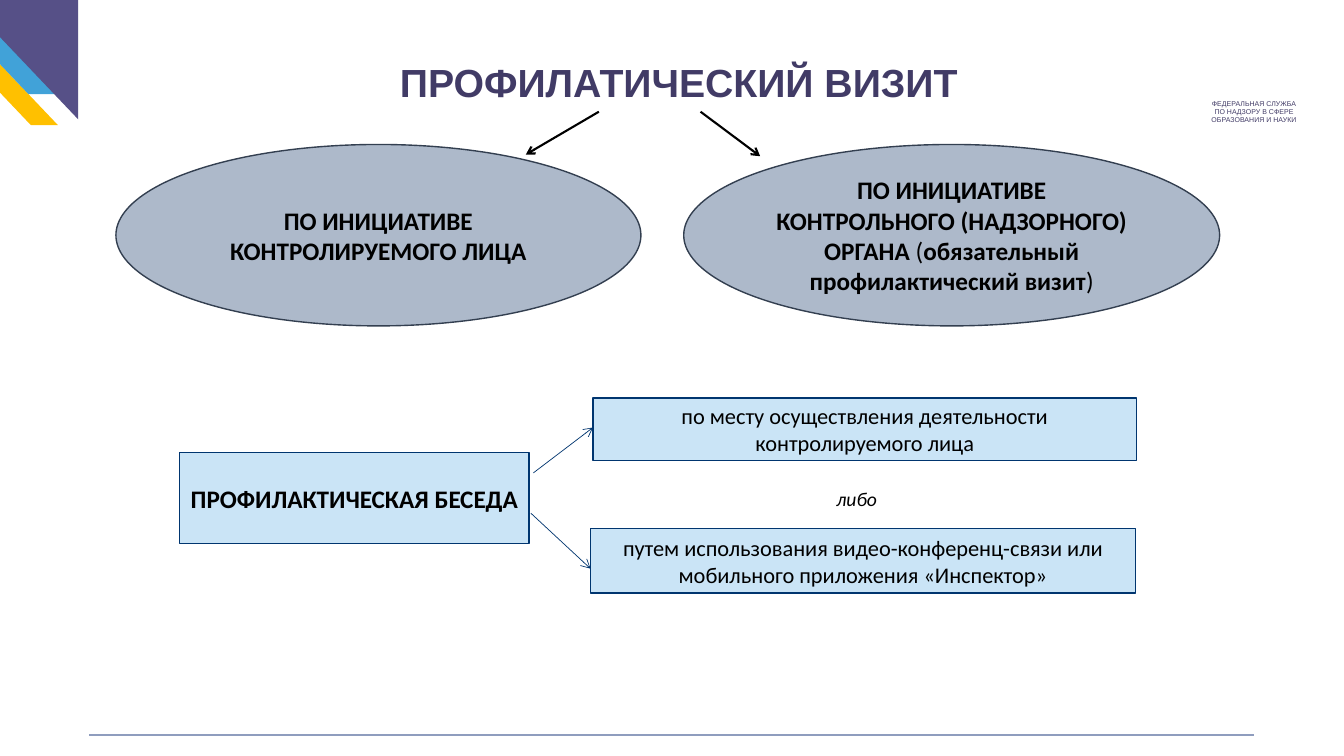
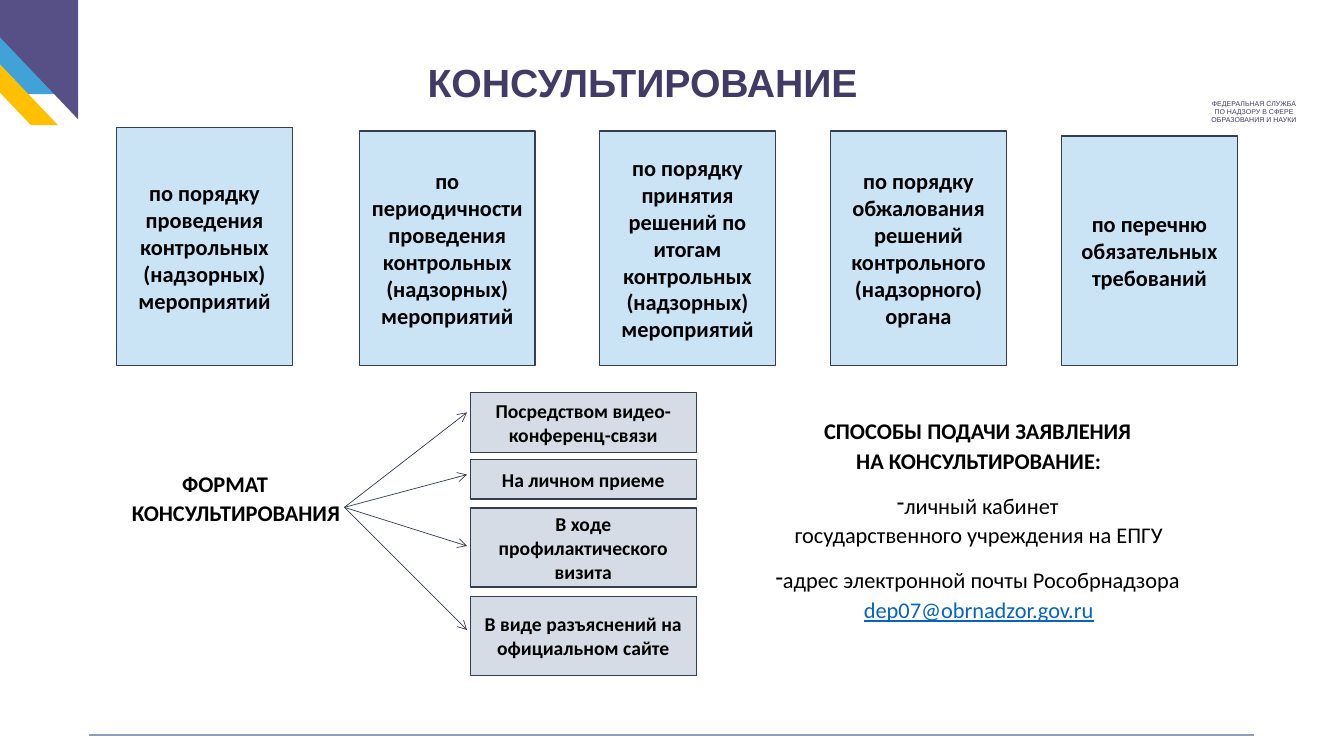
import lxml.etree
import pptx
import pptx.dml.color
import pptx.enum.shapes
import pptx.enum.text
import pptx.oxml.ns
import pptx.util

RGBColor = pptx.dml.color.RGBColor
SHAPE = pptx.enum.shapes.MSO_SHAPE
ALIGN = pptx.enum.text.PP_ALIGN
ANCHOR = pptx.enum.text.MSO_ANCHOR
qn = pptx.oxml.ns.qn

PURPLE = RGBColor(0x56, 0x50, 0x87)
BLUE = RGBColor(0x41, 0xA2, 0xD8)
YELLOW = RGBColor(0xFF, 0xC0, 0x00)
TITLE_COLOR = RGBColor(0x41, 0x3B, 0x66)
RULE_COLOR = RGBColor(0x8F, 0x9D, 0xBE)
PALE_BLUE = RGBColor(0xCA, 0xE4, 0xF6)
NAVY = RGBColor(0x00, 0x35, 0x6F)
GREY_BLUE = RGBColor(0xAD, 0xB9, 0xCA)
PALE_GREY = RGBColor(0xD6, 0xDC, 0xE5)
SLATE = RGBColor(0x33, 0x3F, 0x50)
LINK_COLOR = RGBColor(0x05, 0x63, 0xC1)
BLACK = RGBColor(0, 0, 0)
WHITE = RGBColor(0xFF, 0xFF, 0xFF)

# The slide is a grid of 160 columns by 90 rows with square cells
COLUMNS, ROWS = 160, 90
CELL = pptx.util.Inches(7.5) / ROWS


def add_block(slide, box, fill, outline=None, parts=(), size=16, bold=False,
              preset=SHAPE.RECTANGLE):
    """Filled shape with centred text; every second part switches the weight."""
    block = slide.shapes.add_shape(preset, *[round(n * CELL) for n in box])
    block.shadow.inherit = False
    block.fill.solid()
    block.fill.fore_color.rgb = fill
    if outline is None:
        block.line.fill.background()
    else:
        block.line.color.rgb = outline
        block.line.width = pptx.util.Pt(1)
    block.text_frame.vertical_anchor = ANCHOR.MIDDLE
    paragraph = block.text_frame.paragraphs[0]
    paragraph.alignment = ALIGN.CENTER
    for number, part in enumerate(parts):
        run = paragraph.add_run()
        run.text = part
        run.font.name = "Calibri"
        run.font.size = pptx.util.Pt(size)
        run.font.bold = bold != (number % 2 == 1)
        run.font.color.rgb = BLACK
    return block


def add_line(slide, ends, color, width, arrow=True):
    """Straight line between two grid points, with an arrowhead at the end."""
    line = slide.shapes.add_connector(pptx.enum.shapes.MSO_CONNECTOR.STRAIGHT,
                                      *[round(n * CELL) for n in ends])
    line.line.color.rgb = color
    line.line.width = pptx.util.Pt(width)
    properties = line.element.spPr
    if arrow:
        lxml.etree.SubElement(properties.find(qn("a:ln")), qn("a:tailEnd"), type="arrow")
    lxml.etree.SubElement(properties, qn("a:effectLst"))
    return line


deck = pptx.Presentation()
deck.slide_width = round(COLUMNS * CELL)
deck.slide_height = round(ROWS * CELL)
layout = deck.slide_layouts[5]
for placeholder in list(layout.placeholders):
    if placeholder.placeholder_format.idx >= 10:
        layout.shapes.element.remove(placeholder.element)

# Titles
slides = []
for heading, left in [("ПРОФИЛАТИЧЕСКИЙ ВИЗИТ", 15.3), ("КОНСУЛЬТИРОВАНИЕ", 11)]:
    slide = deck.slides.add_slide(layout)
    title = slide.shapes.title
    title.left, title.top, title.width, title.height = [
        round(n * CELL) for n in (left, 6.4, 131, 6.8)]
    title.text_frame.text = heading
    title.text_frame.vertical_anchor = ANCHOR.MIDDLE
    title.text_frame.paragraphs[0].alignment = ALIGN.CENTER
    font = title.text_frame.paragraphs[0].runs[0].font
    font.name, font.size, font.bold = "Arial", pptx.util.Pt(28), True
    font.color.rgb = TITLE_COLOR
    slides.append(slide)
visit, consulting = slides

# Shared decoration: corner, agency name and bottom rule, moved to the layout
decoration = []
for color, left, top in [(YELLOW, -10, 0.5), (BLUE, -10.3, -3.2)]:
    stripe = add_block(visit, (left, top, 16.9, 14.4), color, preset=SHAPE.PARALLELOGRAM)
    stripe.adjustments[0] = 0.95
    stripe.element.spPr.find(qn("a:xfrm")).set("flipH", "1")
    decoration.append(stripe)
corner = add_block(visit, (-4.3, -0.1, 13.6, 14.3), PURPLE, preset=SHAPE.RIGHT_TRIANGLE)
corner.rotation = 180
agency = visit.shapes.add_textbox(*[round(n * CELL) for n in (141.2, 11.2, 16.2, 4.2)])
agency.text_frame.word_wrap = True
agency.text_frame.text = "ФЕДЕРАЛЬНАЯ СЛУЖБА\nПО НАДЗОРУ В СФЕРЕ ОБРАЗОВАНИЯ И НАУКИ"
for paragraph in agency.text_frame.paragraphs:
    paragraph.alignment = ALIGN.CENTER
    font = paragraph.runs[0].font
    font.name, font.size = "Arial", pptx.util.Pt(5)
    font.color.rgb = TITLE_COLOR
rule = add_line(visit, (10.6, 87.5, 149.3, 87.5), RULE_COLOR, 1.5, arrow=False)
for part in decoration + [corner, agency, rule]:
    layout.shapes.element.append(part.element)

# Visit: who initiates it
initiators = [
    (13.8, 62.5, ["ПО ИНИЦИАТИВЕ КОНТРОЛИРУЕМОГО ЛИЦА"]),
    (81.4, 63.8, ["ПО ИНИЦИАТИВЕ КОНТРОЛЬНОГО (НАДЗОРНОГО) ОРГАНА ", "(",
                  "обязательный профилактический визит", ")"]),
]
for left, width, parts in initiators:
    add_block(visit, (left, 17.2, width, 21.6), GREY_BLUE, SLATE, parts, 18, True, SHAPE.OVAL)
for ends in [(71.3, 13.3, 62.6, 18.4), (83.4, 13.3, 90.5, 18.6)]:
    add_line(visit, ends, BLACK, 1.5)

# Visit: how the talk is held
add_block(visit, (21.4, 53.9, 41.6, 10.8), PALE_BLUE, NAVY,
          ["ПРОФИЛАКТИЧЕСКАЯ БЕСЕДА"], 18, True)
talk_options = [
    ((70.6, 47.4, 64.7, 7.4), "по месту осуществления деятельности контролируемого лица"),
    ((70.3, 62.9, 64.9, 7.7),
     "путем использования видео-конференц-связи или мобильного приложения «Инспектор»"),
]
for box, option in talk_options:
    add_block(visit, box, PALE_BLUE, NAVY, [option])
either = add_block(visit, (96.8, 58.2, 10.4, 2.4), WHITE, parts=["либо"], size=14)
either.text_frame.paragraphs[0].runs[0].font.italic = True
for ends in [(63.5, 56.3, 70.6, 50.9), (63.2, 61.1, 70.3, 67.7)]:
    add_line(visit, ends, NAVY, 0.5)

# Consulting: topics, standing on one row
TOPICS_BOTTOM = 43.5
topics = [
    (13.9, 15.2, "по порядку проведения контрольных (надзорных) мероприятий"),
    (42.8, 15.6, "по периодичности проведения контрольных (надзорных) мероприятий"),
    (71.4, 15.6, "по порядку принятия решений по итогам контрольных (надзорных) мероприятий"),
    (98.9, 15.6, "по порядку обжалования решений контрольного (надзорного) органа"),
    (126.4, 16.2, "по перечню обязательных требований"),
]
for left, top, topic in topics:
    add_block(consulting, (left, top, 20.9, TOPICS_BOTTOM - top), PALE_BLUE, SLATE,
              [topic], 16, True)

# Consulting: formats, with arrows fanning out from the caption
formats = [
    (46.7, 7.2, 49.1, "Посредством видео-конференц-связи"),
    (54.7, 4.7, 56.5, "На личном приеме"),
    (60.5, 9.4, 65, "В ходе профилактического визита"),
    (71, 9.4, 75, "В виде разъяснений на официальном сайте"),
]
for top, height, arrow_row, name in formats:
    add_block(consulting, (56, top, 26.9, height), PALE_GREY, SLATE, [name], 14, True)
    add_line(consulting, (41, 60.4, 55.6, arrow_row), SLATE, 0.5)

# Consulting: caption of the formats and ways to apply
captions = [
    ((15.7, 55.6, 25.5, 9.6), ["ФОРМАТ КОНСУЛЬТИРОВАНИЯ"]),
    ((87.4, 49.4, 58, 26.8), [
        "СПОСОБЫ ПОДАЧИ ЗАЯВЛЕНИЯ\vНА КОНСУЛЬТИРОВАНИЕ:",
        "личный кабинет\vгосударственного учреждения на ЕПГУ",
        "адрес электронной почты Рособрнадзора "]),
]
for box, lines in captions:
    frame = consulting.shapes.add_textbox(*[round(n * CELL) for n in box]).text_frame
    frame.word_wrap = True
    frame.margin_left = frame.margin_right = frame.margin_top = frame.margin_bottom = 0
    for number, text in enumerate(lines):
        paragraph = frame.add_paragraph() if number else frame.paragraphs[0]
        paragraph.text = text
        paragraph.line_spacing = 1.1
        indents = paragraph._p.get_or_add_pPr()
        if len(lines) == 1:
            indents.set("indent", str(pptx.util.Inches(0.5)))
        else:
            paragraph.alignment = ALIGN.CENTER
            indents.set("marL", str(pptx.util.Inches(0.02)))
            indents.set("indent", str(pptx.util.Inches(-0.02)))
        if number:
            paragraph.space_before = pptx.util.Pt(11)
            lxml.etree.SubElement(indents, qn("a:buChar"), char="-")
        if number == 2:
            address = paragraph.add_run()
            address.text = "dep07@obrnadzor.gov.ru"
        for run in paragraph.runs:
            run.font.name, run.font.size = "Calibri", pptx.util.Pt(16)
            run.font.bold = number == 0
            run.font.color.rgb = BLACK
address.font.color.rgb = LINK_COLOR
address.font.underline = True

deck.save("out.pptx")
